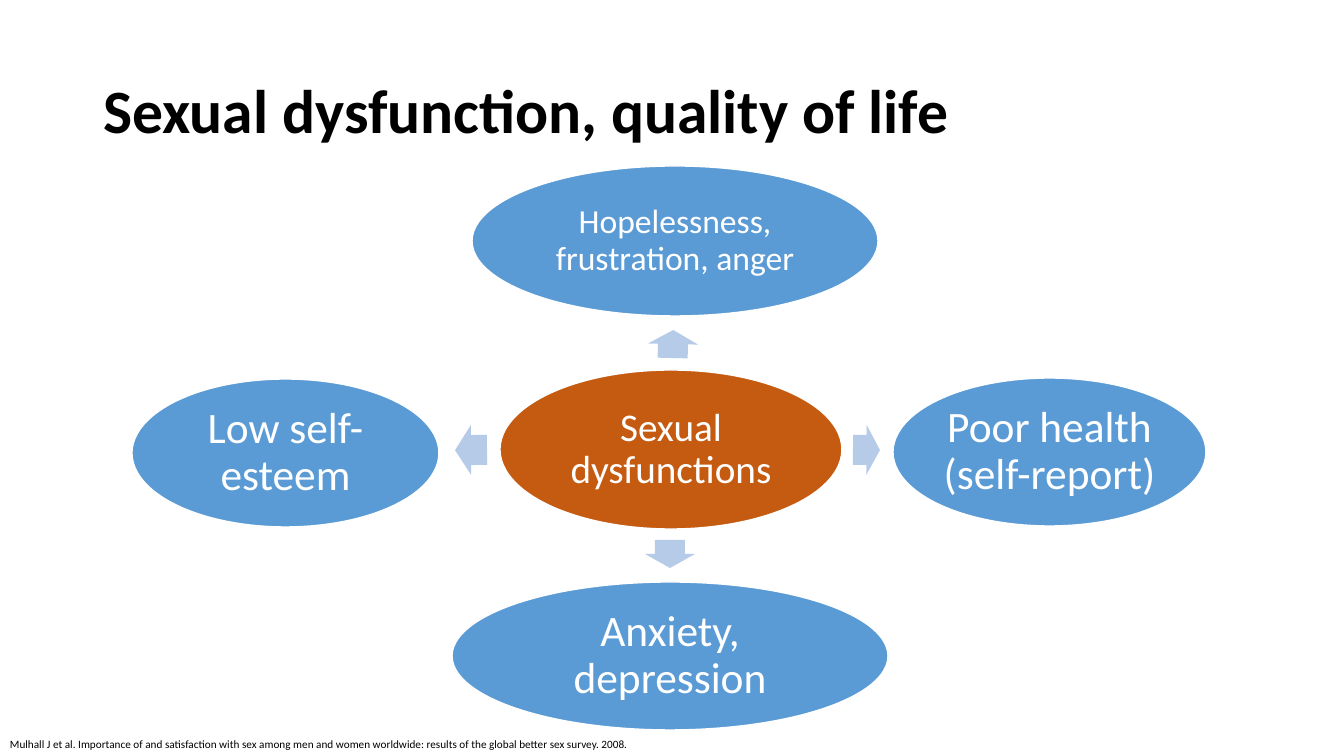
from pptx import Presentation
from pptx.dml.color import RGBColor
from pptx.enum.shapes import MSO_SHAPE
from pptx.enum.text import MSO_ANCHOR, PP_ALIGN
from pptx.util import Emu, Pt

BLACK = RGBColor(0x00, 0x00, 0x00)
WHITE = RGBColor(0xFF, 0xFF, 0xFF)
ORANGE = RGBColor(0xC5, 0x5A, 0x11)
BLUE = RGBColor(0x5B, 0x9B, 0xD5)
PALE_BLUE = RGBColor(0xB5, 0xCB, 0xE7)

SLIDE_SIZE = (1344, 756)
TITLE = ("Sexual dysfunction, quality of life", (93, 41, 1159, 146))
CITATION = (
    "Mulhall J et al. Importance of and satisfaction with sex among men and women "
    "worldwide: results of the global better sex survey. 2008.",
    (0, 732, 1254, 24),
)
OVALS = [
    ("Sexual dysfunctions", (500, 370, 342, 159), ORANGE, 28),
    ("Hopelessness, frustration, anger", (472, 166, 406, 150), BLUE, 24),
    ("Poor health (self-report)", (893, 378, 313, 148), BLUE, 31),
    ("Anxiety, depression", (452, 582, 436, 148), BLUE, 31),
    ("Low self-esteem", (132, 379, 307, 148), BLUE, 31),
]
ARROWS = [
    ((659, 319, 28, 50), 271.3),
    ((853, 425, 27, 50), 0.5),
    ((656, 529, 28, 50), 90),
    ((455, 425, 32, 50), 179.5),
]
OVAL_INSET = 4


def px(length):
    return Emu(round(length * 914400 / 100.8))


def apply(target, values):
    for name, value in values.items():
        setattr(target, name, value)


def place(shape, bounds):
    apply(shape, dict(zip(("left", "top", "width", "height"), map(px, bounds))))


def write(shape, text, size, color, frame_format, para_format, bold=False):
    frame = shape.text_frame
    apply(frame, {"word_wrap": True, **frame_format})
    para = frame.paragraphs[0]
    apply(para, para_format)
    span = para.add_run()
    span.text = text
    apply(span.font, {"name": "Calibri", "size": Pt(size), "bold": bold})
    span.font.color.rgb = color


def add_filled(page, kind, bounds, color):
    shape = page.shapes.add_shape(kind, *map(px, bounds))
    shape.shadow.inherit = False
    shape.fill.solid()
    shape.fill.fore_color.rgb = color
    return shape


def add_oval(page, text, bounds, color, size):
    oval = add_filled(page, MSO_SHAPE.OVAL, bounds, color)
    oval.line.color.rgb = WHITE
    oval.line.width = Pt(1)
    sides = ("margin_left", "margin_top", "margin_right", "margin_bottom")
    frame_format = {side: px(OVAL_INSET) for side in sides}
    frame_format["vertical_anchor"] = MSO_ANCHOR.MIDDLE
    write(oval, text, size, WHITE, frame_format,
          {"alignment": PP_ALIGN.CENTER, "line_spacing": 0.9})


def add_arrow(page, bounds, angle):
    arrow = add_filled(page, MSO_SHAPE.RIGHT_ARROW, bounds, PALE_BLUE)
    arrow.line.fill.background()
    arrow.adjustments[0] = 0.6
    arrow.adjustments[1] = 0.5
    arrow.rotation = angle


def main():
    deck = Presentation()
    deck.slide_width, deck.slide_height = map(px, SLIDE_SIZE)
    page = deck.slides.add_slide(deck.slide_layouts[5])

    title_text, title_bounds = TITLE
    title = page.shapes.title
    place(title, title_bounds)
    write(title, title_text, 44, BLACK, {"vertical_anchor": MSO_ANCHOR.MIDDLE},
          {"alignment": PP_ALIGN.LEFT, "line_spacing": 0.9}, bold=True)

    for oval in OVALS:
        add_oval(page, *oval)
    for arrow in ARROWS:
        add_arrow(page, *arrow)

    citation_text, citation_bounds = CITATION
    box = page.shapes.add_textbox(*map(px, citation_bounds))
    write(box, citation_text, 8, BLACK, {}, {})

    deck.save("out.pptx")


if __name__ == "__main__":
    main()
